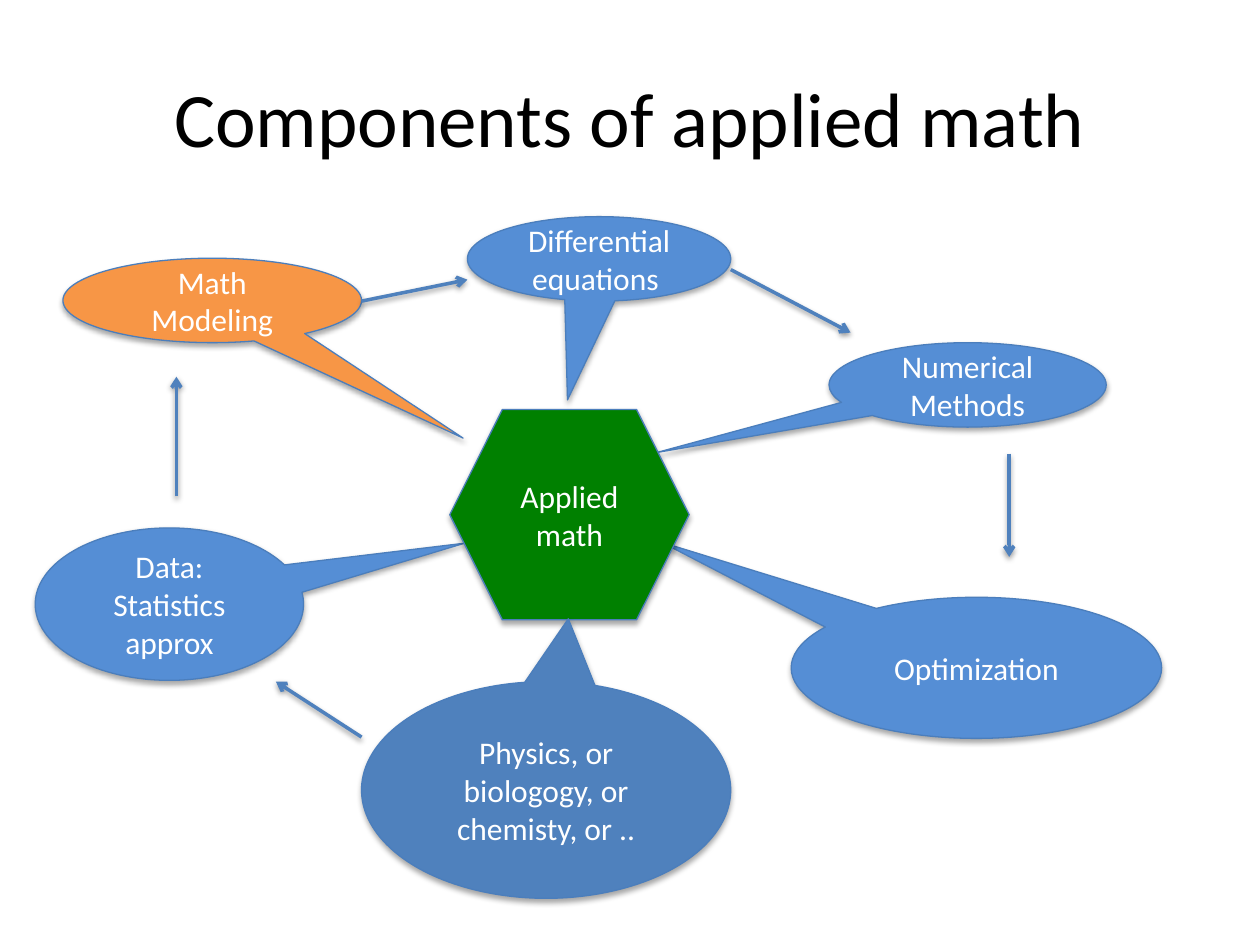
from lxml import etree
from pptx import Presentation
from pptx.dml.color import RGBColor
from pptx.enum.shapes import MSO_CONNECTOR, MSO_SHAPE
from pptx.enum.text import MSO_ANCHOR, PP_ALIGN
from pptx.oxml import parse_xml
from pptx.oxml.ns import qn
from pptx.util import Inches, Pt

CALL = MSO_SHAPE.OVAL_CALLOUT
HEX = MSO_SHAPE.HEXAGON
LINE = MSO_CONNECTOR.STRAIGHT
CENTER = PP_ALIGN.CENTER
MIDDLE = MSO_ANCHOR.MIDDLE

COLORS = {
    "black": "000000", "white": "FFFFFF", "edge": "4B7EBC", "sky": "558ED5",
    "blue": "4F81BD", "orange": "F79646", "green": "008000",
}
RGB = {name: RGBColor.from_string(code) for name, code in COLORS.items()}
SHADOW = (
    '<a:effectLst xmlns:a="http://schemas.openxmlformats.org/drawingml/2006/main">'
    '<a:outerShdw blurRad="40000" dist="{}" dir="5400000" rotWithShape="0">'
    '<a:srgbClr val="000000"><a:alpha val="{}"/></a:srgbClr>'
    '</a:outerShdw></a:effectLst>'
)


def write(shape, text, size=18, color="white"):
    frame = shape.text_frame
    frame.word_wrap = True
    frame.vertical_anchor = MIDDLE
    frame.text = text
    for para in frame.paragraphs:
        para.alignment = CENTER
        para.font.name = "Calibri"
        para.font.size = Pt(size)
        para.font.color.rgb = RGB[color]


def shade(shape, dist, alpha):
    """Add a soft shadow below a shape whose fill and line are already set."""
    shape._element.spPr.append(parse_xml(SHADOW.format(dist, alpha)))


prs = Presentation()
prs.slide_width, prs.slide_height = Inches(10), Inches(7.5)
slide = prs.slides.add_slide(prs.slide_layouts[5])

title = slide.shapes.title
title.left, title.top = Inches(0.5), Inches(0.3)
title.width, title.height = Inches(9), Inches(1.25)
write(title, "Components of applied math", size=44, color="black")

# text, kind, left, top, width, height, fill, callout tip
nodes = [
    ("Optimization", CALL, 6.28, 4.74, 2.94, 1.12, "sky", (-0.85, -0.89)),
    ("Numerical Methods", CALL, 6.58, 2.72, 2.2, 0.67, "sky", (-1.12, 0.8)),
    ("Differential equations ", CALL, 3.71, 1.72, 2.09, 0.67, "sky", (-0.12, 1.67)),
    ("Math Modeling", CALL, 0.5, 2.05, 2.37, 0.67, "orange", (0.84, 1.63)),
    ("Data: Statistics\napprox", CALL, 0.28, 4.19, 2.13, 1.21, "sky", (1.1, -0.4)),
    ("Applied math", HEX, 3.57, 3.25, 1.9, 1.67, "green", ()),
    ("Physics, or biologogy, or chemisty, or ..", CALL,
     2.87, 5.41, 2.93, 1.72, "blue", (0.06, -0.79)),
]
for text, kind, left, top, width, height, fill, tip in nodes:
    node = slide.shapes.add_shape(
        kind, Inches(left), Inches(top), Inches(width), Inches(height))
    for i, value in enumerate(tip):
        node.adjustments[i] = value
    node.fill.solid()
    node.fill.fore_color.rgb = RGB[fill]
    node.line.color.rgb = RGB["edge"]
    node.line.width = Pt(0.75)
    shade(node, 23000, 35000)
    write(node, text)

# start x, start y, end x, end y
arrows = [
    (2.87, 5.85, 2.19, 5.41),
    (1.4, 3.94, 1.4, 2.99),
    (2.87, 2.39, 3.71, 2.22),
    (5.8, 2.14, 6.75, 2.64),
    (8.01, 3.6, 8.01, 4.42),
]
for ends in arrows:
    arrow = slide.shapes.add_connector(LINE, *map(Inches, ends))
    arrow.line.color.rgb = RGB["blue"]
    arrow.line.width = Pt(2)
    etree.SubElement(arrow.line._get_or_add_ln(), qn("a:tailEnd"), type="arrow")
    shade(arrow, 20000, 38000)

prs.save("out.pptx")
